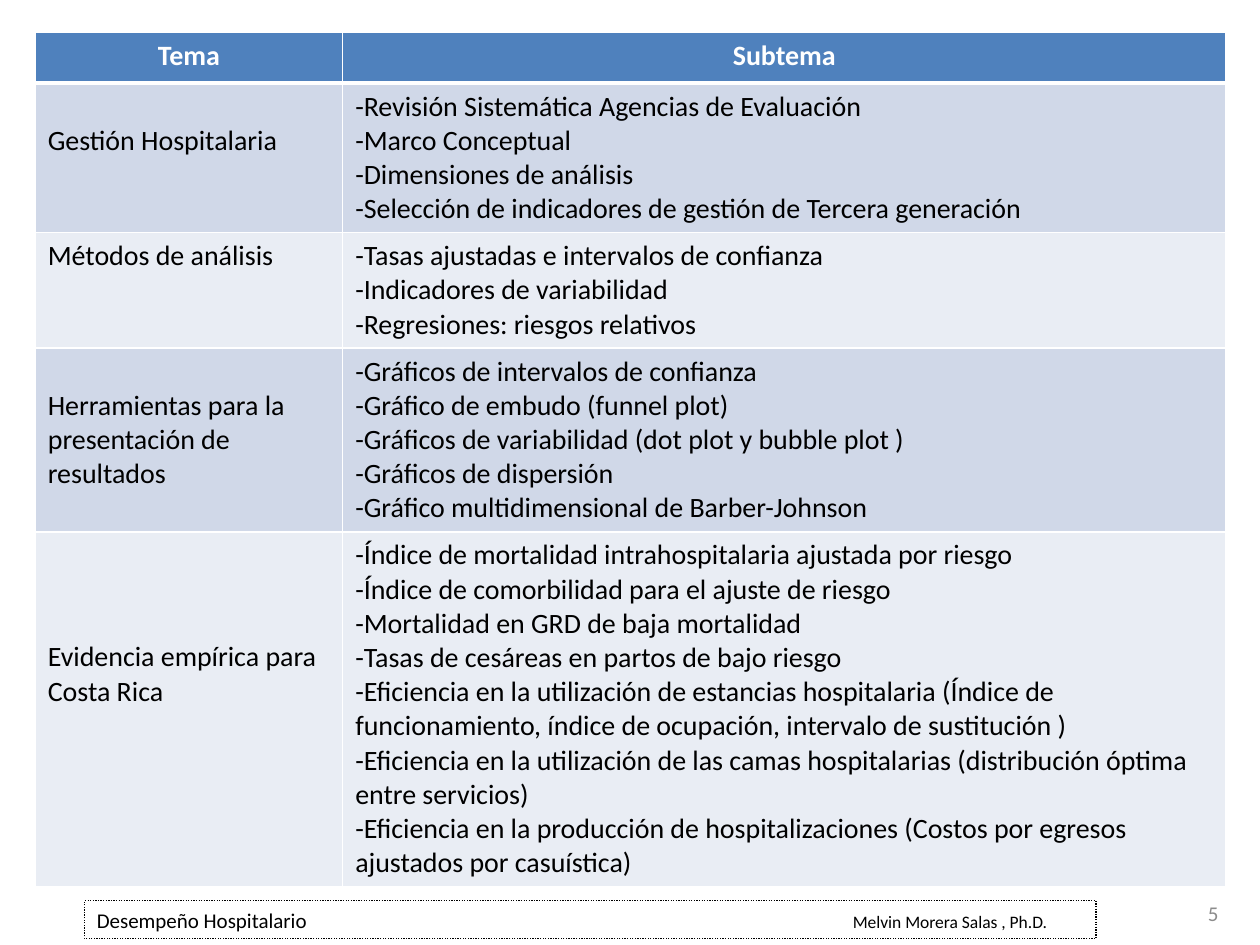
from pptx import Presentation
from pptx.dml.color import RGBColor
from pptx.enum.dml import MSO_LINE
from pptx.enum.shapes import MSO_SHAPE
from pptx.enum.text import MSO_ANCHOR, PP_ALIGN
from pptx.oxml.ns import qn
from pptx.util import Inches, Pt
from lxml import etree

LEFT, CENTER, RIGHT = PP_ALIGN.LEFT, PP_ALIGN.CENTER, PP_ALIGN.RIGHT
TOP, MIDDLE = MSO_ANCHOR.TOP, MSO_ANCHOR.MIDDLE
WHITE = RGBColor(0xFF, 0xFF, 0xFF)
BLACK = RGBColor(0, 0, 0)
GRAY = RGBColor(0x8C, 0x8C, 0x8C)
BLUE = RGBColor(0x4F, 0x81, 0xBD)
BANDS = RGBColor(0xD0, 0xD8, 0xE8), RGBColor(0xE9, 0xED, 0xF4)

# Content
HEADINGS = ["Tema", "Subtema"]
# Topic, lines the topic is moved down, lines the row holds, subtopics
TOPICS = [
    ("Gestión Hospitalaria", 1, 4, [
        "-Revisión Sistemática Agencias de Evaluación",
        "-Marco Conceptual",
        "-Dimensiones de análisis",
        "-Selección de indicadores de gestión de Tercera generación",
    ]),
    ("Métodos de análisis", 0, 3, [
        "-Tasas ajustadas e intervalos de confianza",
        "-Indicadores de variabilidad",
        "-Regresiones: riesgos relativos",
    ]),
    ("Herramientas para la presentación de resultados", 1, 5, [
        "-Gráficos de intervalos de confianza",
        "-Gráfico de embudo (funnel plot)",
        "-Gráficos de variabilidad (dot plot y bubble plot )",
        "-Gráficos de dispersión",
        "-Gráfico multidimensional de Barber-Johnson",
    ]),
    ("Evidencia empírica para Costa Rica", 3, 10, [
        "-Índice de mortalidad intrahospitalaria ajustada por riesgo",
        "-Índice de comorbilidad para el ajuste de riesgo",
        "-Mortalidad en GRD de baja mortalidad",
        "-Tasas de cesáreas en partos de bajo riesgo",
        "-Eficiencia en la utilización de estancias hospitalaria (Índice de "
        "funcionamiento, índice de ocupación, intervalo de sustitución )",
        "-Eficiencia en la utilización de las camas hospitalarias "
        "(distribución óptima entre servicios)",
        "-Eficiencia en la producción de hospitalizaciones (Costos por egresos "
        "ajustados por casuística)",
    ]),
]
FOOTER_TITLE = "Desempeño Hospitalario"
FOOTER_AUTHOR = "Melvin Morera Salas , Ph.D."
PAGE_NUMBER = "5"

# Layout in inches
COLUMN_WIDTHS = [2.44, 7.01]
HEADER_HEIGHT = 0.4
LINE_HEIGHT = 0.27
CELL_MARGIN = 0.05

BODY = {"name": "Calibri", "size": Pt(16), "bold": False}
HEADING = {**BODY, "bold": True}
FOOTER = {**BODY, "size": Pt(12)}
AUTHOR = {**BODY, "size": Pt(10)}


def add_run(paragraph, text, font_format, color):
    run = paragraph.add_run()
    run.text = text
    for name, value in font_format.items():
        setattr(run.font, name, value)
    run.font.color.rgb = color


def write_lines(text_frame, lines, font_format, color, alignment=LEFT):
    for index, line in enumerate(lines):
        paragraph = text_frame.paragraphs[0] if index == 0 else text_frame.add_paragraph()
        paragraph.alignment = alignment
        add_run(paragraph, line, font_format, color)


def set_borders(cell, bottom_width=1, top_width=1):
    properties = cell._tc.get_or_add_tcPr()
    widths = {"a:lnL": 1, "a:lnR": 1, "a:lnT": top_width, "a:lnB": bottom_width}
    for tag, width in widths.items():
        line = etree.SubElement(properties, qn(tag), w=str(Pt(width)))
        fill = etree.SubElement(line, qn("a:solidFill"))
        etree.SubElement(fill, qn("a:srgbClr"), val=str(WHITE))


def fill_cell(cell, color):
    cell.fill.solid()
    cell.fill.fore_color.rgb = color


def add_topic_table(slide):
    heights = [HEADER_HEIGHT] + [
        lines * LINE_HEIGHT + 2 * CELL_MARGIN for _, _, lines, _ in TOPICS]
    table = slide.shapes.add_table(
        len(heights), len(COLUMN_WIDTHS), Inches(0.28), Inches(0.26),
        Inches(sum(COLUMN_WIDTHS)), Inches(sum(heights))).table
    table.horz_banding = False
    for column, width in zip(table.columns, COLUMN_WIDTHS):
        column.width = Inches(width)
    for row, height in zip(table.rows, heights):
        row.height = Inches(height)

    # Header row
    for column, heading in enumerate(HEADINGS):
        cell = table.cell(0, column)
        set_borders(cell, bottom_width=3)
        fill_cell(cell, BLUE)
        write_lines(cell.text_frame, [heading], HEADING, WHITE, CENTER)

    # Topic rows
    for row, (topic, offset, _, subtopics) in enumerate(TOPICS, start=1):
        for column, lines in enumerate([[topic], subtopics]):
            cell = table.cell(row, column)
            set_borders(cell, top_width=3 if row == 1 else 1)
            fill_cell(cell, BANDS[(row - 1) % 2])
            write_lines(cell.text_frame, lines, BODY, BLACK)
        table.cell(row, 0).margin_top = Inches(CELL_MARGIN + offset * LINE_HEIGHT)


def add_footer(slide):
    box = slide.shapes.add_shape(
        MSO_SHAPE.RECTANGLE, Inches(0.67), Inches(7.15), Inches(8.03), Inches(0.3))
    box.shadow.inherit = False
    box.fill.background()
    box.line.color.rgb = BLACK
    box.line.width = Pt(0.75)
    box.line.dash_style = MSO_LINE.ROUND_DOT
    box.text_frame.vertical_anchor = TOP
    write_lines(box.text_frame, [FOOTER_TITLE + "\t"], FOOTER, BLACK)
    paragraph = box.text_frame.paragraphs[0]
    add_run(paragraph, FOOTER_AUTHOR, AUTHOR, BLACK)
    tabs = etree.SubElement(paragraph._p.get_or_add_pPr(), qn("a:tabLst"))
    etree.SubElement(tabs, qn("a:tab"), pos=str(Inches(6)), algn="l")


def add_page_number(slide):
    box = slide.shapes.add_textbox(Inches(7.44), Inches(7.05), Inches(2.33), Inches(0.4))
    box.text_frame.word_wrap = True
    box.text_frame.vertical_anchor = MIDDLE
    write_lines(box.text_frame, [PAGE_NUMBER], FOOTER, GRAY, RIGHT)


def main():
    presentation = Presentation()
    presentation.slide_width, presentation.slide_height = Inches(10), Inches(7.5)
    slide = presentation.slides.add_slide(presentation.slide_layouts[6])
    add_topic_table(slide)
    add_footer(slide)
    add_page_number(slide)
    presentation.save("out.pptx")


if __name__ == "__main__":
    main()
